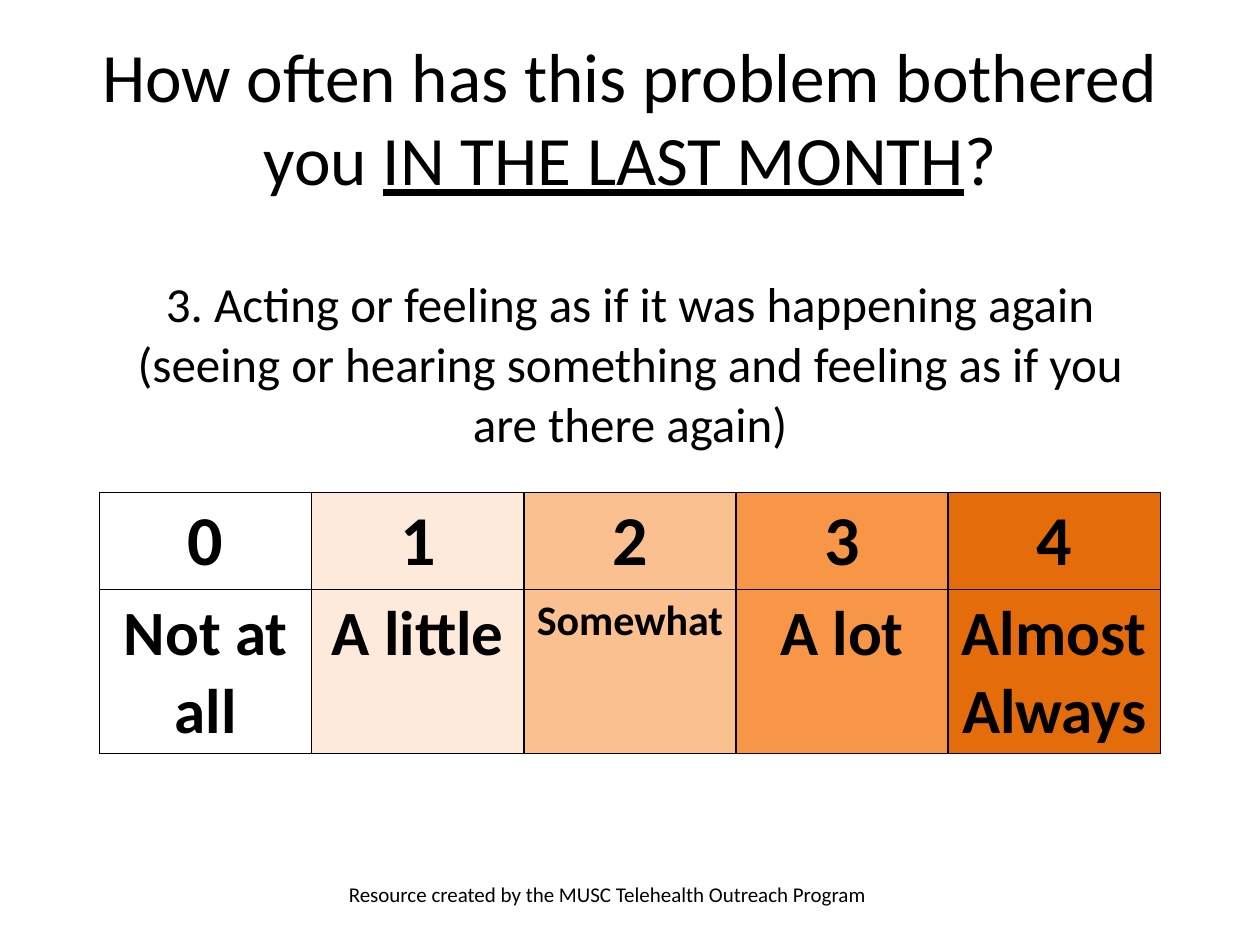
from lxml import etree
from pptx import Presentation
from pptx.dml.color import RGBColor
from pptx.enum.text import MSO_ANCHOR, PP_ALIGN
from pptx.oxml.ns import qn
from pptx.util import Inches, Pt

CENTER = PP_ALIGN.CENTER
MIDDLE = MSO_ANCHOR.MIDDLE
BLACK = "000000"
TABLE_LEFT = Inches(0.79)
TABLE_WIDTH = Inches(8.42)


def color(value):
    return RGBColor.from_string(value)


def format_text(para, size, bold=False):
    for span in para.runs:
        span.font.name = "Calibri"
        span.font.size = Pt(size)
        span.font.bold = bold
        span.font.color.rgb = color(BLACK)


deck = Presentation()
deck.slide_width = Inches(10)
deck.slide_height = Inches(7.5)
page = deck.slides.add_slide(deck.slide_layouts[5])

title = page.shapes.title
title.left, title.top = Inches(0.5), Inches(0.3)
title.width, title.height = Inches(9), Inches(1.25)
title.text_frame.vertical_anchor = MIDDLE
para = title.text_frame.paragraphs[0]
para.alignment = CENTER
for text, underlined in [
    ("How often has this problem bothered you ", False),
    ("IN THE LAST MONTH", True),
    ("?", False),
]:
    span = para.add_run()
    span.text = text
    span.font.underline = underlined
format_text(para, 39.6)

credit = page.shapes.add_textbox(Inches(2.67), Inches(6.95), Inches(4.5), Inches(0.4))
credit.text_frame.word_wrap = True
credit.text_frame.text = "Resource created by the MUSC Telehealth Outreach Program"
format_text(credit.text_frame.paragraphs[0], 12)

scale = [
    ("0", "Not at all", 36, "FFFFFF"),
    ("1", "A little", 36, "FDEADA"),
    ("2", "Somewhat", 24, "FAC090"),
    ("3", "A lot", 36, "F79646"),
    ("4", "Almost Always", 36, "E46C0A"),
]
scale_table = page.shapes.add_table(
    2, len(scale), TABLE_LEFT, Inches(3.91), TABLE_WIDTH, Inches(2.07)
).table
scale_table.rows[0].height = Inches(0.77)
scale_table.rows[1].height = Inches(1.3)
for column, (score, label, label_size, fill) in enumerate(scale):
    for row, (text, size) in enumerate([(score, 40), (label, label_size)]):
        cell = scale_table.cell(row, column)
        cell.text_frame.text = text
        para = cell.text_frame.paragraphs[0]
        para.alignment = CENTER
        format_text(para, size, bold=True)
        properties = cell._tc.get_or_add_tcPr()
        for side in ("a:lnL", "a:lnR", "a:lnT", "a:lnB"):
            border = etree.SubElement(properties, qn(side), w=str(Pt(1)))
            solid = etree.SubElement(border, qn("a:solidFill"))
            etree.SubElement(solid, qn("a:srgbClr"), val=BLACK)
        cell.fill.solid()
        cell.fill.fore_color.rgb = color(fill)

question_table = page.shapes.add_table(
    1, 1, TABLE_LEFT, Inches(2.19), TABLE_WIDTH, Inches(1.4)
).table
question_table.first_row = False
question_table.horz_banding = False
question = question_table.cell(0, 0)
question.margin_left = question.margin_right = Inches(0.05)
question.margin_top = question.margin_bottom = Inches(0)
question.fill.background()
question.text_frame.text = (
    "3. Acting or feeling as if it was happening again "
    "(seeing or hearing something and feeling as if you are there again)"
)
para = question.text_frame.paragraphs[0]
para.alignment = CENTER
format_text(para, 28)

deck.save("out.pptx")
